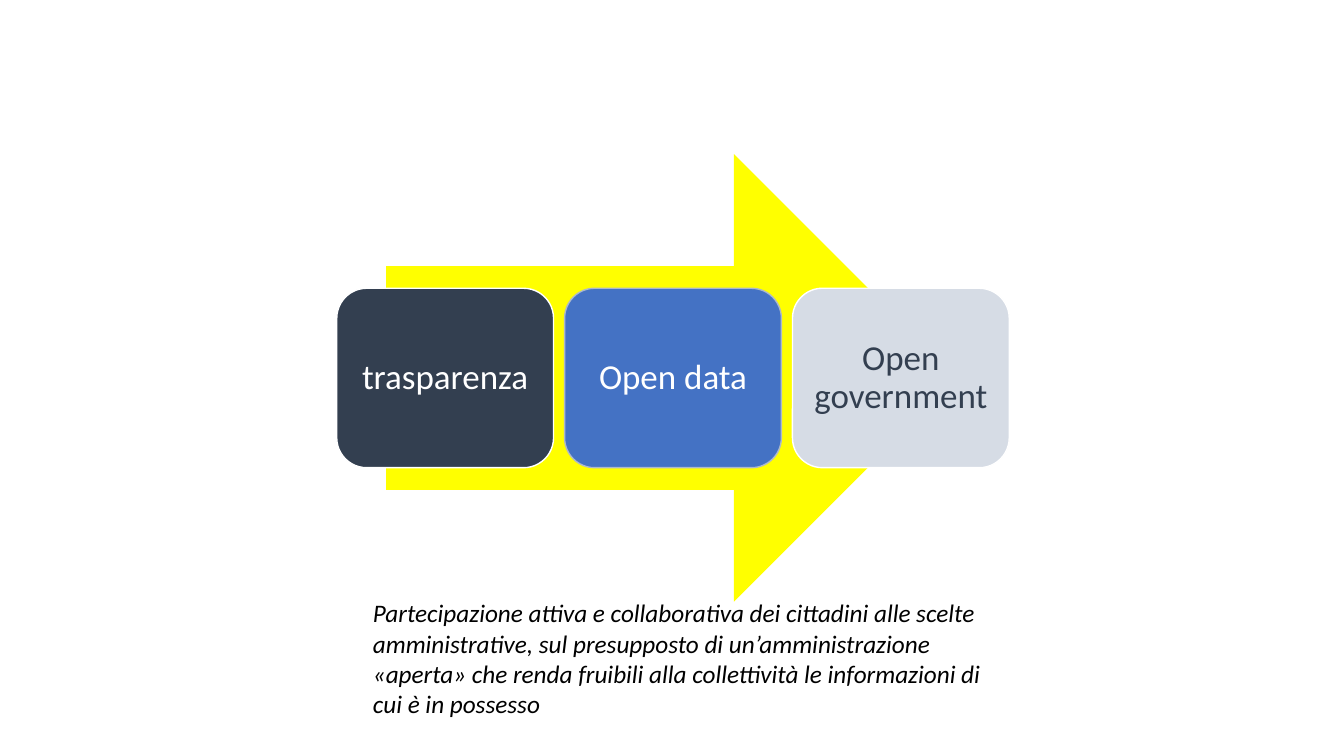
import dataclasses

import pptx
import pptx.dml.color
import pptx.enum.shapes
import pptx.enum.text
import pptx.util

RGB = pptx.dml.color.RGBColor
SHAPE = pptx.enum.shapes.MSO_SHAPE
SCALE = 9144  # EMU per px, 100 px to the inch

WHITE = RGB(0xFF, 0xFF, 0xFF)
BLACK = RGB(0x00, 0x00, 0x00)
YELLOW = RGB(0xFF, 0xFF, 0x00)
NAVY = RGB(0x33, 0x3F, 0x50)
BLUE = RGB(0x44, 0x72, 0xC4)
STEEL = RGB(0xAD, 0xB9, 0xCA)
PALE = RGB(0xD6, 0xDC, 0xE5)

FONT = "Calibri"
LEFT, TOP, WIDTH, HEIGHT = 334, 286, 215, 178
PITCH = 226
INSET = 10
NOTE = (
    "Partecipazione attiva e collaborativa dei cittadini alle scelte "
    "amministrative, sul presupposto di un’amministrazione «aperta» che renda "
    "fruibili alla collettività le informazioni di cui è in possesso"
)


@dataclasses.dataclass(frozen=True)
class Stage:
    label: str
    fill: RGB
    edge: RGB
    ink: RGB


STAGES = [
    Stage("trasparenza", NAVY, WHITE, WHITE),
    Stage("Open data", BLUE, STEEL, WHITE),
    Stage("Open government", PALE, WHITE, NAVY),
]


def px(size: int) -> pptx.util.Emu:
    return pptx.util.Emu(size * SCALE)


def draw_arrow(slide: pptx.slide.Slide) -> None:
    arrow = slide.shapes.add_shape(
        SHAPE.RIGHT_ARROW, px(383), px(153), px(567), px(444)
    )
    arrow.shadow.inherit = False
    arrow.fill.solid()
    arrow.fill.fore_color.rgb = YELLOW
    arrow.line.fill.background()


def draw_stage(slide: pptx.slide.Slide, stage: Stage, left: int) -> None:
    box = slide.shapes.add_shape(
        SHAPE.ROUNDED_RECTANGLE, px(left), px(TOP), px(WIDTH), px(HEIGHT)
    )
    box.shadow.inherit = False
    box.fill.solid()
    box.fill.fore_color.rgb = stage.fill
    box.line.color.rgb = stage.edge
    box.line.width = pptx.util.Pt(1)

    frame = box.text_frame
    frame.word_wrap = True
    frame.vertical_anchor = pptx.enum.text.MSO_ANCHOR.MIDDLE
    frame.margin_left = frame.margin_right = px(INSET)
    frame.margin_top = frame.margin_bottom = px(INSET)
    para = frame.paragraphs[0]
    para.text = stage.label
    para.alignment = pptx.enum.text.PP_ALIGN.CENTER
    para.line_spacing = 0.9
    style(para, 25, stage.ink)


def draw_note(slide: pptx.slide.Slide) -> None:
    box = slide.shapes.add_textbox(px(360), px(588), px(638), px(131))
    frame = box.text_frame
    frame.word_wrap = True
    frame.auto_size = pptx.enum.text.MSO_AUTO_SIZE.SHAPE_TO_FIT_TEXT
    para = frame.paragraphs[0]
    para.text = NOTE
    style(para, 18, BLACK)
    para.font.italic = True


def style(para: pptx.text.text._Paragraph, size: int, ink: RGB) -> None:
    para.font.name = FONT
    para.font.size = pptx.util.Pt(size)
    para.font.color.rgb = ink


def main() -> None:
    deck = pptx.Presentation()
    deck.slide_width, deck.slide_height = px(1333), px(750)
    slide = deck.slides.add_slide(deck.slide_layouts[6])
    draw_arrow(slide)
    for index, stage in enumerate(STAGES):
        draw_stage(slide, stage, LEFT + index * PITCH)
    draw_note(slide)
    deck.save("out.pptx")


if __name__ == "__main__":
    main()
